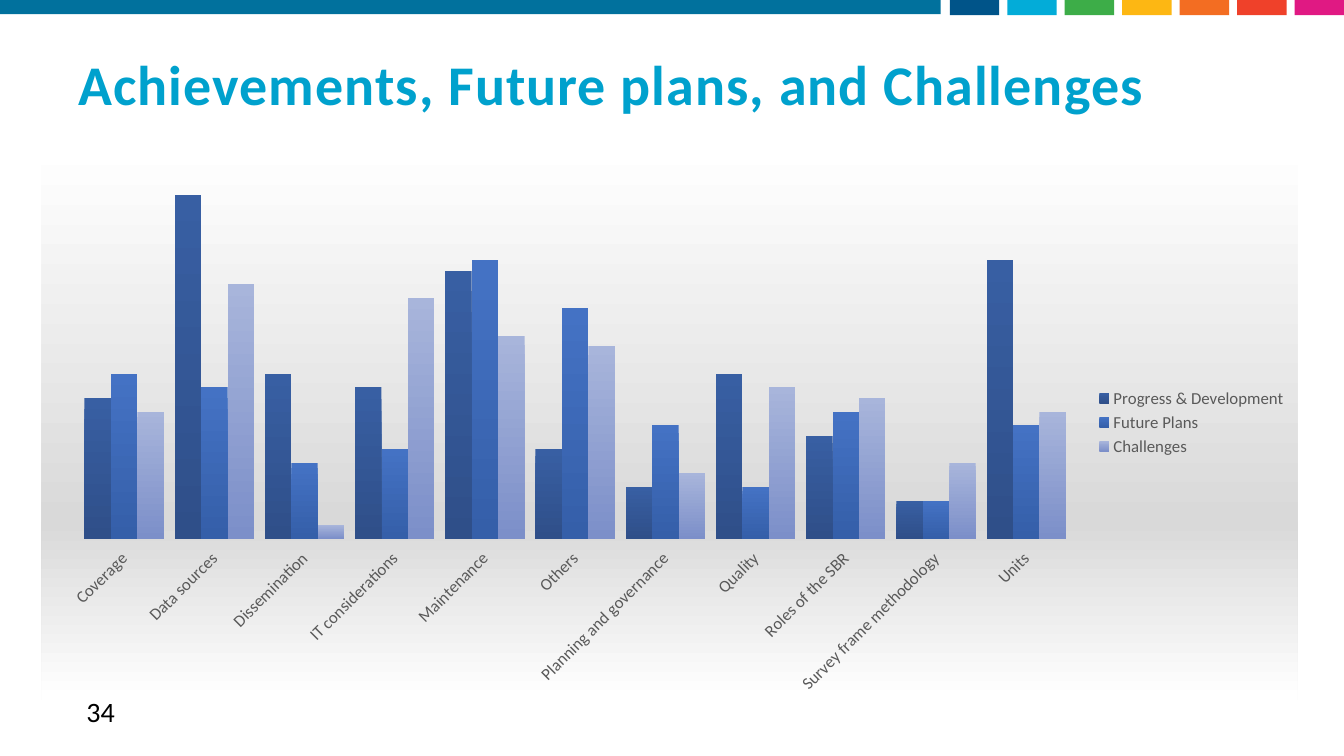
from dataclasses import dataclass

from lxml.etree import SubElement
from pptx import Presentation
from pptx.chart.chart import Chart
from pptx.chart.data import CategoryChartData
from pptx.dml.color import RGBColor
from pptx.enum.chart import XL_CHART_TYPE, XL_LEGEND_POSITION, XL_TICK_LABEL_POSITION, XL_TICK_MARK
from pptx.enum.shapes import MSO_SHAPE
from pptx.enum.text import MSO_ANCHOR
from pptx.oxml import parse_xml
from pptx.oxml.ns import nsdecls, qn
from pptx.slide import Slide
from pptx.util import Inches, Pt

GradientStops = tuple[tuple[int, str], ...]


@dataclass(frozen=True)
class Theme:
    font: str = "Calibri"
    title_size: int = 40
    page_size: int = 20
    chart_size: int = 12
    title: str = "00A1CD"
    page: str = "000000"
    chart_text: str = "595959"
    banner: str = "01719D"
    swatches: tuple[str, ...] = (
        "005489", "03ACD8", "3DAD48", "FDB713", "F36D22", "EF412A", "E01983")
    chart_area: GradientStops = ((0, "FFFFFF"), (68, "D9D9D9"), (100, "FFFFFF"))


@dataclass(frozen=True)
class Bar:
    left: float
    width: float
    height: float
    color: str


@dataclass(frozen=True)
class Label:
    text: str
    left: float
    top: float
    width: float
    height: float
    size: int
    color: str
    bold: bool = False
    line_spacing: float = 1.0
    tracking: int = 0


@dataclass(frozen=True)
class TopicSeries:
    name: str
    values: tuple[int, ...]
    stops: GradientStops


THEME = Theme()
SWATCH_LEFT, SWATCH_PITCH = 9.42, 0.57

BARS = [Bar(0, 9.33, 0.14, THEME.banner)] + [
    Bar(SWATCH_LEFT + index * SWATCH_PITCH, 0.49, 0.15, color)
    for index, color in enumerate(THEME.swatches)
]

LABELS = [
    Label("Achievements, Future plans, and Challenges", 0.68, 0.5, 11.13, 0.73,
          THEME.title_size, THEME.title, bold=True, line_spacing=0.9, tracking=80),
    Label("34", 0.76, 6.86, 3, 0.4, THEME.page_size, THEME.page),
]

TOPICS = (
    "Coverage", "Data sources", "Dissemination", "IT considerations", "Maintenance",
    "Others", "Planning and governance", "Quality", "Roles of the SBR",
    "Survey frame methodology", "Units",
)

SERIES = [
    TopicSeries("Progress & Development", (41, 100, 48, 44, 78, 26, 15, 48, 30, 11, 81),
                ((0, "385FA3"), (100, "2F4F89"))),
    TopicSeries("Future Plans", (48, 44, 22, 26, 81, 67, 33, 15, 37, 11, 33),
                ((0, "4472C4"), (100, "355FA9"))),
    TopicSeries("Challenges", (37, 74, 4, 70, 59, 56, 19, 44, 41, 22, 37),
                ((0, "A8B5DB"), (100, "7C8FC9"))),
]

PLOT_LAYOUT = {"x": 0.03, "y": 0.09, "w": 0.79, "h": 0.62}


def draw_bar(slide: Slide, bar: Bar) -> None:
    shape = slide.shapes.add_shape(
        MSO_SHAPE.RECTANGLE, Inches(bar.left), 0, Inches(bar.width), Inches(bar.height))
    shape.shadow.inherit = False
    shape.fill.solid()
    shape.fill.fore_color.rgb = RGBColor.from_string(bar.color)
    shape.line.fill.background()


def draw_label(slide: Slide, label: Label) -> None:
    frame = slide.shapes.add_textbox(
        Inches(label.left), Inches(label.top),
        Inches(label.width), Inches(label.height)).text_frame
    frame.word_wrap = True
    frame.vertical_anchor = MSO_ANCHOR.MIDDLE
    frame.text = label.text
    paragraph = frame.paragraphs[0]
    paragraph.line_spacing = label.line_spacing
    font = paragraph.runs[0].font
    font.name = THEME.font
    font.size = Pt(label.size)
    font.bold = label.bold
    font.color.rgb = RGBColor.from_string(label.color)
    if label.tracking:
        paragraph.runs[0]._r.get_or_add_rPr().set("spc", str(label.tracking))


def vertical_gradient(stops: GradientStops) -> str:
    entries = "".join(
        f'<a:gs pos="{position * 1000}"><a:srgbClr val="{color}"/></a:gs>'
        for position, color in stops)
    return (f'<c:spPr {nsdecls("c", "a")}><a:gradFill><a:gsLst>{entries}</a:gsLst>'
            '<a:lin ang="5400000" scaled="0"/></a:gradFill><a:ln><a:noFill/></a:ln></c:spPr>')


def place_plot(chart: Chart) -> None:
    plot_area = chart._chartSpace.chart.plotArea
    for existing in plot_area.findall(qn("c:layout")):
        plot_area.remove(existing)
    layout = parse_xml(f'<c:layout {nsdecls("c")}><c:manualLayout/></c:layout>')
    settings = {"layoutTarget": "inner", "xMode": "edge", "yMode": "edge", **PLOT_LAYOUT}
    for tag, value in settings.items():
        SubElement(layout[0], qn(f"c:{tag}")).set("val", str(value))
    plot_area.insert(0, layout)


def draw_topic_chart(slide: Slide) -> None:
    data = CategoryChartData()
    data.categories = TOPICS
    for entry in SERIES:
        data.add_series(entry.name, entry.values)
    chart = slide.shapes.add_chart(
        XL_CHART_TYPE.COLUMN_CLUSTERED, Inches(0.41), Inches(1.44),
        Inches(12.46), Inches(5.5), data).chart
    chart.has_title = False
    chart.font.name = THEME.font
    chart.font.size = Pt(THEME.chart_size)
    chart.font.color.rgb = RGBColor.from_string(THEME.chart_text)
    chart._chartSpace.chart.addnext(parse_xml(vertical_gradient(THEME.chart_area)))

    plot = chart.plots[0]
    plot.gap_width = 41
    plot.overlap = 0
    plot.vary_by_categories = False
    for series, entry in zip(plot.series, SERIES):
        properties = series._element.get_or_add_spPr()
        properties.getparent().replace(properties, parse_xml(vertical_gradient(entry.stops)))

    values = chart.value_axis
    values.minimum_scale = 0
    values.maximum_scale = 100
    values.has_major_gridlines = False
    values.visible = False

    topics = chart.category_axis
    topics.major_tick_mark = XL_TICK_MARK.NONE
    topics.tick_label_position = XL_TICK_LABEL_POSITION.LOW
    topics.format.line.fill.background()
    topics.tick_labels.font.size = Pt(THEME.chart_size)
    topics._element.find(qn("c:txPr")).find(qn("a:bodyPr")).set("rot", "-2700000")

    chart.has_legend = True
    chart.legend.position = XL_LEGEND_POSITION.RIGHT
    chart.legend.include_in_layout = False
    place_plot(chart)


def main() -> None:
    presentation = Presentation()
    presentation.slide_width = Inches(13.33)
    presentation.slide_height = Inches(7.5)
    slide = presentation.slides.add_slide(presentation.slide_layouts[6])
    for bar in BARS:
        draw_bar(slide, bar)
    draw_topic_chart(slide)
    for label in LABELS:
        draw_label(slide, label)
    presentation.save("out.pptx")


if __name__ == "__main__":
    main()
